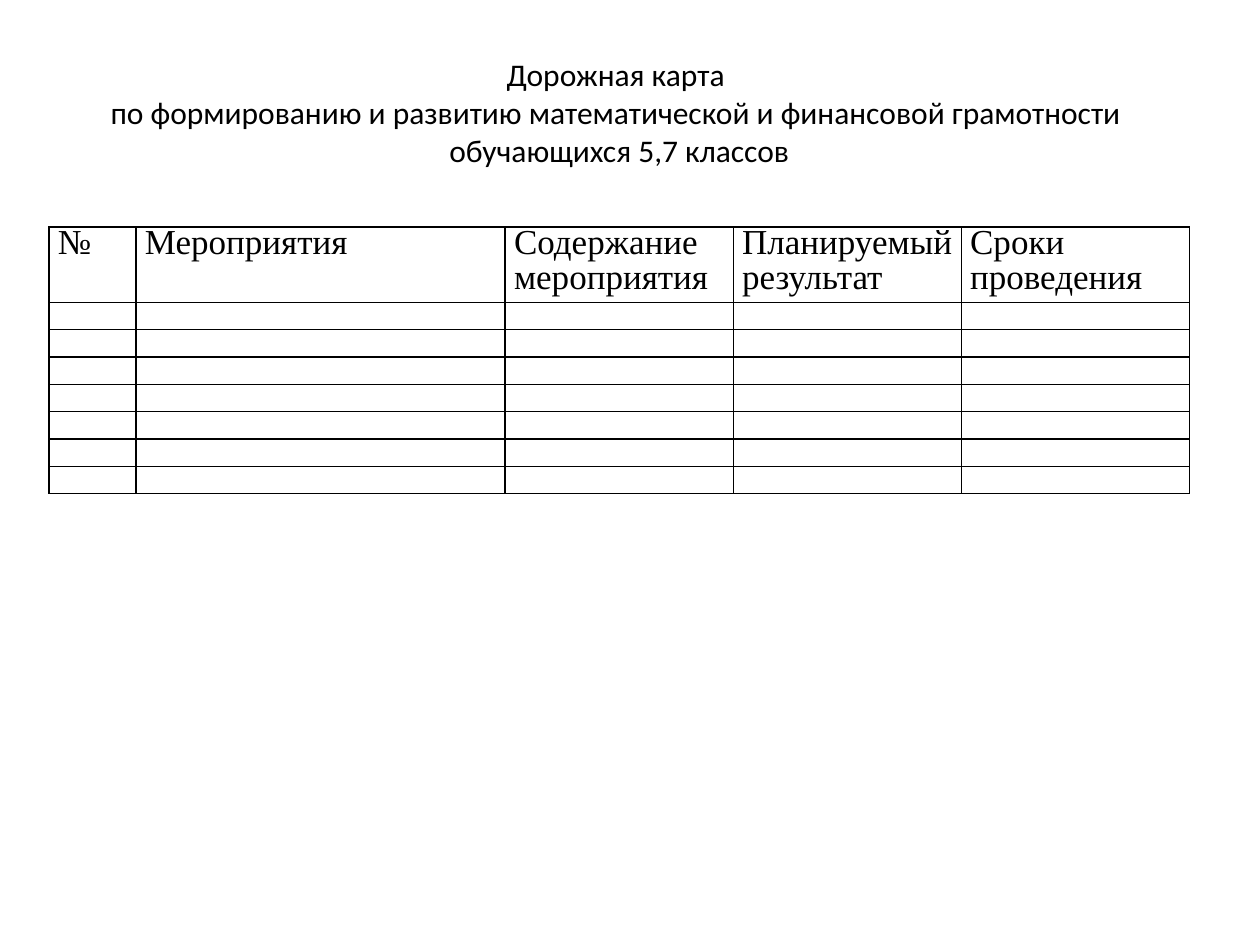
import lxml.etree
import pptx
import pptx.dml.color
import pptx.enum.text
import pptx.oxml.ns
import pptx.util

Inches = pptx.util.Inches
Pt = pptx.util.Pt
ALIGN = pptx.enum.text.PP_ALIGN
qn = pptx.oxml.ns.qn

BLACK = "000000"
TITLE = [
    "Дорожная карта ",
    "по формированию и развитию математической и финансовой грамотности ",
    "обучающихся 5,7 классов",
]
HEADERS = ["№", "Мероприятия", "Содержание мероприятия", "Планируемый результат", "Сроки проведения"]
COLUMN_WIDTHS = [0.69, 2.93, 1.81, 1.81, 1.81]
EMPTY_ROWS = 7
HEADER_HEIGHT, ROW_HEIGHT = 0.6, 0.217


def color(value):
    """Turn a hex string into a colour."""
    return pptx.dml.color.RGBColor.from_string(value)


def style_font(font, name, size):
    """Set the typeface, size and colour of a font."""
    font.name = name
    font.size = Pt(size)
    font.color.rgb = color(BLACK)


def add_borders(cell, value, width):
    """Draw a solid line on all four sides of a cell."""
    tc_pr = cell._tc.get_or_add_tcPr()
    for i, side in enumerate(("a:lnL", "a:lnR", "a:lnT", "a:lnB")):
        ln = lxml.etree.Element(qn(side), w=str(Pt(width)))
        fill = lxml.etree.SubElement(ln, qn("a:solidFill"))
        lxml.etree.SubElement(fill, qn("a:srgbClr"), val=value)
        tc_pr.insert(i, ln)


def format_cell(cell, text):
    """Fill in one table cell, with a small line height when it is empty."""
    cell.margin_left = cell.margin_right = Inches(0.07)
    cell.margin_top = cell.margin_bottom = 0
    cell.fill.background()
    add_borders(cell, BLACK, 1)
    p = cell.text_frame.paragraphs[0]
    p.alignment = ALIGN.JUSTIFY
    p.line_spacing = 0.9
    style_font(p.font, "Times New Roman", 20 if text else 10)
    if text:
        p.add_run().text = text
    else:
        lxml.etree.SubElement(p._p, qn("a:endParaRPr"), sz="1000")


def add_plan_table(s, left, top, width):
    """Add the plan table with its header and empty rows."""
    height = HEADER_HEIGHT + EMPTY_ROWS * ROW_HEIGHT
    table = s.shapes.add_table(
        EMPTY_ROWS + 1, len(HEADERS), Inches(left), Inches(top), Inches(width), Inches(height)
    ).table
    table.first_row = table.horz_banding = False
    for column, column_width in zip(table.columns, COLUMN_WIDTHS):
        column.width = Inches(column_width)
    for i, row in enumerate(table.rows):
        row.height = Inches(ROW_HEIGHT if i else HEADER_HEIGHT)
        for cell, header in zip(row.cells, HEADERS):
            format_cell(cell, "" if i else header)


def add_title(s, left, top, width, height):
    """Add the centred title, one paragraph a line."""
    tf = s.shapes.add_textbox(Inches(left), Inches(top), Inches(width), Inches(height)).text_frame
    tf.word_wrap = True
    tf.auto_size = pptx.enum.text.MSO_AUTO_SIZE.SHAPE_TO_FIT_TEXT
    tf.text = "\n".join(TITLE)
    for p in tf.paragraphs:
        p.alignment = ALIGN.CENTER
        style_font(p.font, "Calibri", 18)


def main():
    """Build the slide and save it."""
    prs = pptx.Presentation()
    prs.slide_width, prs.slide_height = Inches(10), Inches(7.5)
    s = prs.slides.add_slide(prs.slide_layouts[6])
    left, width = 0.39, sum(COLUMN_WIDTHS)
    add_plan_table(s, left, 1.8, width)
    add_title(s, left, 0.39, width, 1.01)
    prs.save("out.pptx")


if __name__ == "__main__":
    main()
